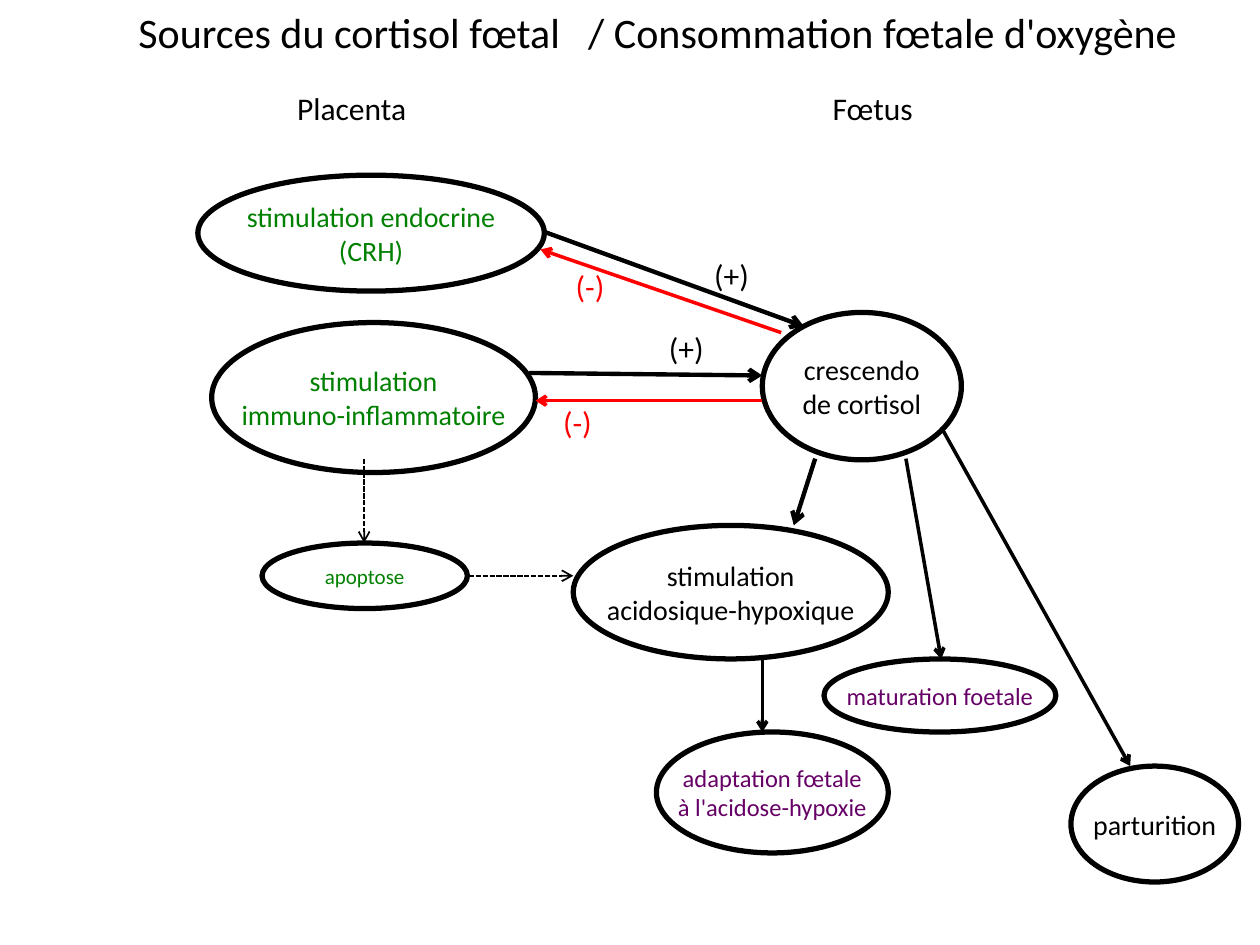
import dataclasses

import lxml.etree
import pptx
import pptx.dml.color
import pptx.enum.dml
import pptx.enum.shapes
import pptx.enum.text
import pptx.oxml.ns
import pptx.util

Inches = pptx.util.Inches
Pt = pptx.util.Pt
qn = pptx.oxml.ns.qn


@dataclasses.dataclass(frozen=True)
class Theme:
    """Colours, font and sizes of the slide."""
    font: str = "Calibri"
    black: str = "000000"
    white: str = "FFFFFF"
    placenta: str = "008000"
    effect: str = "660066"
    inhibit: str = "FF0000"
    title: int = 24
    label: int = 18
    node: int = 16
    small: int = 14
    tiny: int = 12
    outline: int = 3


T = Theme()


def rgb(value):
    """Return a colour from its hex value."""
    return pptx.dml.color.RGBColor.from_string(value)


def write(tf, lines, size, color, align=pptx.enum.text.PP_ALIGN.LEFT):
    """Write each line as a paragraph."""
    for i, line in enumerate(lines):
        p = tf.paragraphs[0] if i == 0 else tf.add_paragraph()
        p.alignment = align
        r = p.add_run()
        r.text = line
        r.font.name, r.font.size = T.font, Pt(size)
        r.font.color.rgb = rgb(color)


def add_label(s, x, y, w, h, text, size, color=T.black, tab=None):
    """Add a text box, with an optional tab stop in inches."""
    tf = s.shapes.add_textbox(Inches(x), Inches(y), Inches(w), Inches(h)).text_frame
    tf.word_wrap = True
    write(tf, [text], size, color)
    if tab:
        pPr = tf.paragraphs[0]._p.get_or_add_pPr()
        tabs = lxml.etree.SubElement(pPr, qn("a:tabLst"))
        lxml.etree.SubElement(tabs, qn("a:tab"), pos=str(Inches(tab)), algn="l")


def add_node(s, x, y, w, h, lines, size=T.node, color=T.black, alpha=None):
    """Add an outlined ellipse with centred text."""
    sp = s.shapes.add_shape(pptx.enum.shapes.MSO_SHAPE.OVAL,
                            Inches(x), Inches(y), Inches(w), Inches(h))
    sp.shadow.inherit = False
    sp.fill.solid()
    sp.fill.fore_color.rgb = rgb(T.white)
    if alpha:
        clr = sp.fill._xPr.find(".//" + qn("a:srgbClr"))
        lxml.etree.SubElement(clr, qn("a:alpha"), val=str(alpha * 1000))
    sp.line.color.rgb = rgb(T.black)
    sp.line.width = Pt(T.outline)
    tf = sp.text_frame
    tf.word_wrap = False
    tf.vertical_anchor = pptx.enum.text.MSO_ANCHOR.MIDDLE
    write(tf, lines, size, color, pptx.enum.text.PP_ALIGN.CENTER)


def add_arrow(s, x1, y1, x2, y2, width, color=T.black, dashed=False):
    """Add a straight arrow pointing at its second end."""
    cx = s.shapes.add_connector(pptx.enum.shapes.MSO_CONNECTOR.STRAIGHT,
                                Inches(x1), Inches(y1), Inches(x2), Inches(y2))
    cx.line.color.rgb = rgb(color)
    cx.line.width = Pt(width)
    if dashed:
        cx.line.dash_style = pptx.enum.dml.MSO_LINE.SQUARE_DOT
    lxml.etree.SubElement(cx.line._get_or_add_ln(), qn("a:tailEnd"), type="arrow")
    lxml.etree.SubElement(cx._element.spPr, qn("a:effectLst"))


def add_headings(s, x, y):
    """Place the title and the two column names."""
    add_label(s, x, y, 8.71, 0.5,
              "Sources du cortisol fœtal\t/ Consommation fœtale d'oxygène", T.title, tab=3.57)
    add_label(s, x + 1.26, y + 0.66, 5.62, 0.4, "Placenta\tFœtus", T.label, tab=4.25)


def add_placenta(s, x, y):
    """Place the placental stimulations and apoptosis."""
    add_node(s, x, y, 2.75, 0.92, ["stimulation endocrine", "(CRH)"], color=T.placenta)
    add_node(s, x + 0.11, y + 1.17, 2.57, 1.19,
             ["stimulation", "immuno-inflammatoire"], color=T.placenta)
    add_node(s, x + 0.51, y + 2.92, 1.63, 0.52, ["apoptose"], T.tiny, T.placenta)
    add_arrow(s, x + 1.32, y + 2.25, x + 1.32, y + 2.92, 1, dashed=True)
    add_arrow(s, x + 2.15, y + 3.18, x + 2.98, y + 3.18, 1, dashed=True)


def add_fetus(s, x, y):
    """Place the cortisol rise and its fetal effects."""
    add_node(s, x + 1.5, y, 1.58, 1.17, ["crescendo", "de cortisol"])
    add_node(s, x, y + 1.69, 2.5, 1.06, ["stimulation", "acidosique-hypoxique"])
    add_node(s, x + 0.66, y + 3.33, 1.84, 0.96,
             ["adaptation fœtale", "à l'acidose-hypoxie"], T.small, T.effect, 81)
    add_node(s, x + 1.99, y + 2.75, 1.84, 0.58, ["maturation foetale"], T.small, T.effect, 81)
    add_node(s, x + 3.95, y + 3.6, 1.33, 0.92, ["parturition"])
    for x1, y1, x2, y2, width in ((1.92, 1.16, 1.75, 1.69, 2.5), (1.5, 2.75, 1.5, 3.33, 2),
                                  (2.64, 1.16, 2.92, 2.75, 2), (2.92, 0.91, 4.42, 3.6, 2)):
        add_arrow(s, x + x1, y + y1, x + x2, y + y2, width)


def add_feedback(s, x, y):
    """Place the positive and negative loops between the columns."""
    for x1, y1, x2, y2 in ((0.12, 0, 2.18, 0.75), (0, 1.12, 1.85, 1.14)):
        add_arrow(s, x + x1, y + y1, x + x2, y + y2, 2.5)
    for x1, y1, x2, y2 in ((2, 0.8, 0.09, 0.14), (1.85, 1.34, 0.05, 1.34)):
        add_arrow(s, x + x1, y + y1, x + x2, y + y2, 2, T.inhibit)
    for dx, dy in ((1.37, 0.14), (1.01, 0.72)):
        add_label(s, x + dx, y + dy, 0.48, 0.4, "(+)", T.label)
    for dx, dy in ((0.27, 0.23), (0.17, 1.31)):
        add_label(s, x + dx, y + dy, 0.61, 0.4, "(-)", T.label, T.inhibit)


def main():
    """Build and save the slide."""
    prs = pptx.Presentation()
    prs.slide_width, prs.slide_height = Inches(10), Inches(7.5)
    s = prs.slides.add_slide(prs.slide_layouts[6])
    add_headings(s, 1, 0)
    add_placenta(s, 1.57, 1.39)
    add_fetus(s, 4.55, 2.48)
    add_feedback(s, 4.2, 1.84)
    prs.save("out.pptx")


if __name__ == "__main__":
    main()
